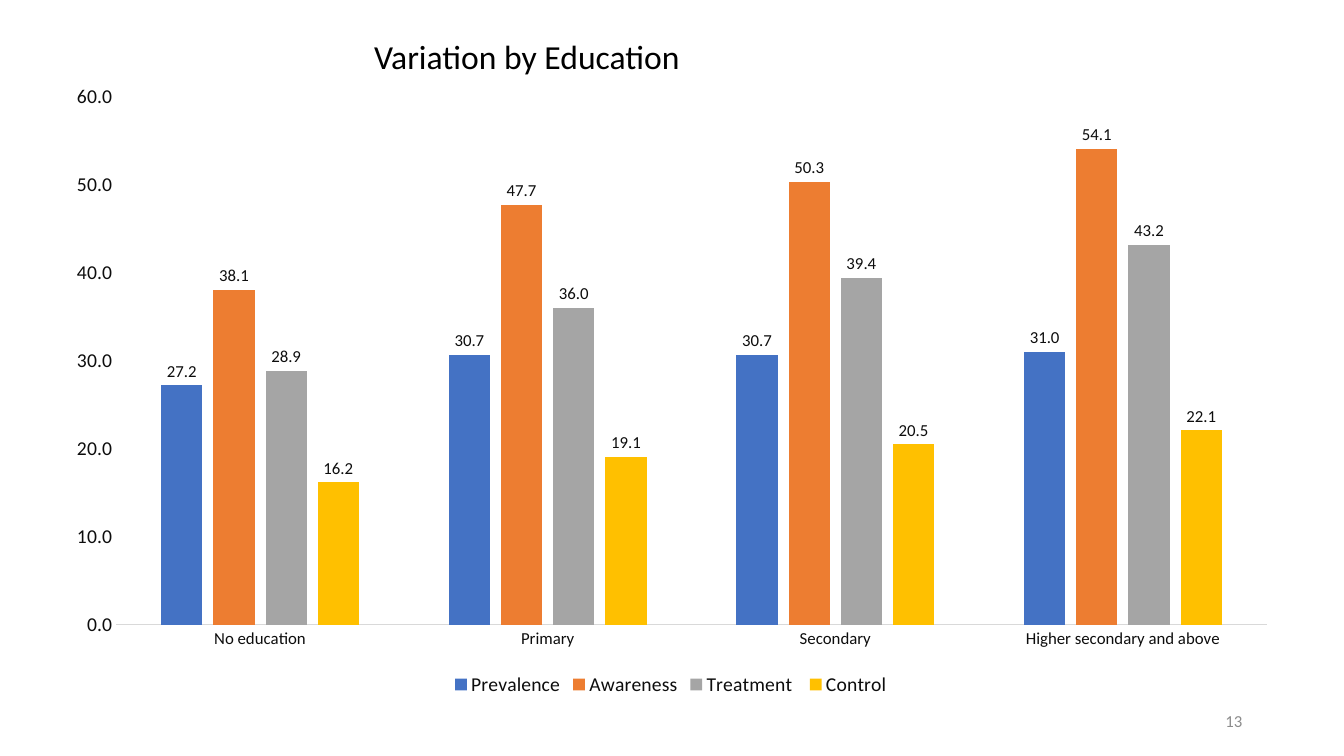
from pptx import Presentation
from pptx import util as u
from pptx.chart.data import CategoryChartData
from pptx.dml.color import RGBColor
from pptx.enum import chart as ch, text
from pptx.oxml import parse_xml

FONT = "Calibri"
COLORS = {"title": "000000", "label": "0D0D0D", "number": "8C8C8C", "axis": "D9D9D9"}
CATEGORIES = ["No education", "Primary", "Secondary", "Higher secondary and above"]
SERIES = [
    ("Prevalence", "4472C4", [27.2, 30.7, 30.7, 31.0]),
    ("Awareness", "ED7D31", [38.1, 47.7, 50.3, 54.1]),
    ("Treatment ", "A5A5A5", [28.9, 36.0, 39.4, 43.2]),
    ("Control ", "FFC000", [16.2, 19.1, 20.5, 22.1]),
]


def style_font(font, size, color):
    font.name, font.size, font.bold = FONT, u.Pt(size), False
    font.color.rgb = RGBColor.from_string(COLORS[color])


def write(sp, content, size, color, align=text.PP_ALIGN.LEFT, anchor=text.MSO_ANCHOR.TOP):
    tf = sp.text_frame
    tf.word_wrap = True
    tf.auto_size = text.MSO_AUTO_SIZE.NONE
    tf.vertical_anchor = anchor
    p = tf.paragraphs[0]
    p.alignment = align
    r = p.add_run()
    r.text = content
    style_font(r.font, size, color)


prs = Presentation()
prs.slide_width, prs.slide_height = u.Inches(13.33), u.Inches(7.5)
s = prs.slides.add_slide(prs.slide_layouts[5])

# Slide number
number = s.shapes.add_textbox(u.Inches(9.42), u.Inches(6.95), u.Inches(3), u.Inches(0.4))
write(number, "13", 12, "number", text.PP_ALIGN.RIGHT, text.MSO_ANCHOR.MIDDLE)

# Clustered columns
data = CategoryChartData(number_format="0.0")
data.categories = CATEGORIES
for name, _, values in SERIES:
    data.add_series(name, values)
chart = s.shapes.add_chart(
    ch.XL_CHART_TYPE.COLUMN_CLUSTERED,
    u.Inches(0.54), u.Inches(0.71), u.Inches(12.27), u.Inches(6.24), data).chart
chart.has_title = False
style_font(chart.font, 11, "title")

plot = chart.plots[0]
plot.gap_width, plot.overlap = 219, -27
plot.vary_by_categories = False
for series, (_, color, _) in zip(plot.series, SERIES):
    series.format.fill.solid()
    series.format.fill.fore_color.rgb = RGBColor.from_string(color)
    labels = series.data_labels
    labels.show_value = True
    labels.number_format, labels.number_format_is_linked = "0.0", False
    labels.position = ch.XL_LABEL_POSITION.OUTSIDE_END
    style_font(labels.font, 12, "label")

# Axes
for axis, size in ((chart.category_axis, 12), (chart.value_axis, 14)):
    axis.major_tick_mark = axis.minor_tick_mark = ch.XL_TICK_MARK.NONE
    axis.has_major_gridlines = False
    style_font(axis.tick_labels.font, size, "label")
axis_line = chart.category_axis.format.line
axis_line.width = u.Pt(0.75)
axis_line.color.rgb = RGBColor.from_string(COLORS["axis"])
value_axis = chart.value_axis
value_axis.format.line.fill.background()
value_axis.minimum_scale, value_axis.maximum_scale, value_axis.major_unit = 0, 60, 10
value_axis.tick_labels.number_format = "0.0"
value_axis.tick_labels.number_format_is_linked = False

# Legend
chart.has_legend = True
chart.legend.position = ch.XL_LEGEND_POSITION.BOTTOM
chart.legend.include_in_layout = False
style_font(chart.legend.font, 14, "label")

# Plot area as shares of the chart frame
plot_area = chart._chartSpace.chart.plotArea
for old in plot_area.xpath("c:layout"):
    plot_area.remove(old)
plot_area.insert(0, parse_xml(
    '<c:layout xmlns:c="http://schemas.openxmlformats.org/drawingml/2006/chart">'
    '<c:manualLayout><c:layoutTarget val="inner"/><c:xMode val="edge"/><c:yMode val="edge"/>'
    '<c:x val="0.05"/><c:y val="0.04"/><c:w val="0.93"/><c:h val="0.84"/>'
    '</c:manualLayout></c:layout>'))

# Title
title = s.shapes.title
title.left, title.top = u.Inches(3.61), u.Inches(0.31)
title.width, title.height = u.Inches(5.36), u.Inches(0.5)
write(title, "Variation by Education", 24, "title")

prs.save("out.pptx")
